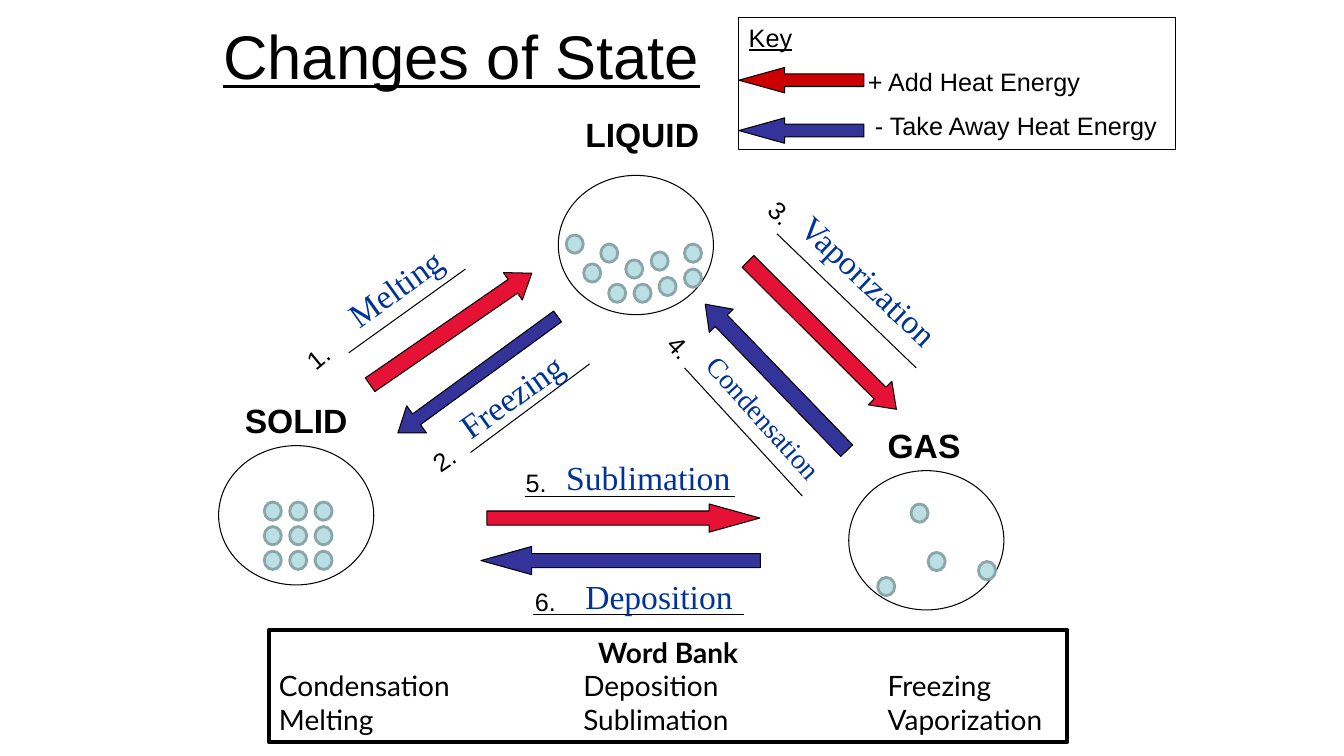
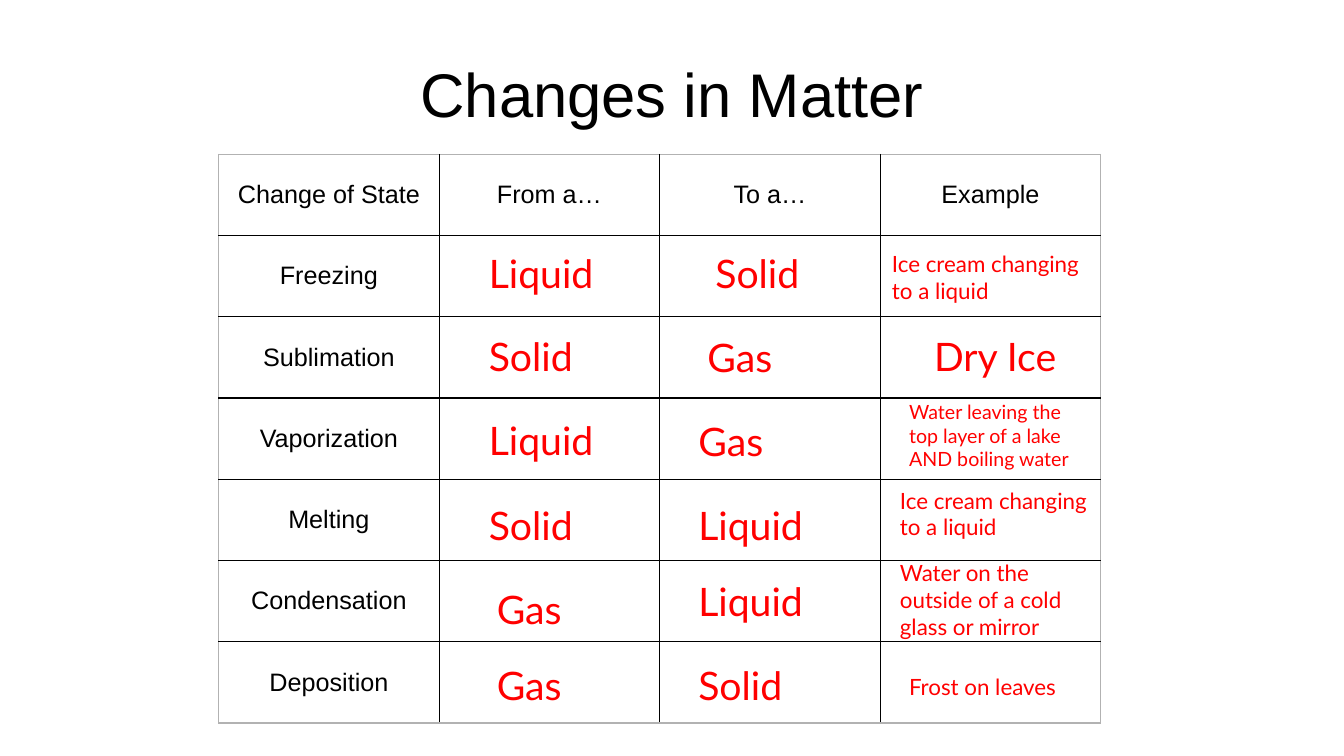
from lxml import etree
from pptx import Presentation
from pptx.dml.color import RGBColor
from pptx.enum.shapes import MSO_CONNECTOR, MSO_SHAPE
from pptx.enum.text import MSO_ANCHOR, PP_ALIGN
from pptx.oxml.ns import qn
from pptx.util import Cm, Pt

LEFT, CENTER = PP_ALIGN.LEFT, PP_ALIGN.CENTER
TOP, MIDDLE = MSO_ANCHOR.TOP, MSO_ANCHOR.MIDDLE
ELLIPSE, RECT, ARROW = MSO_SHAPE.OVAL, MSO_SHAPE.RECTANGLE, MSO_SHAPE.RIGHT_ARROW
STRAIGHT = MSO_CONNECTOR.STRAIGHT

BLACK = RGBColor(0x00, 0x00, 0x00)
GRAY = RGBColor(0xB2, 0xB2, 0xB2)
ADD_RED = RGBColor(0xE6, 0x12, 0x35)
KEY_RED = RGBColor(0xCC, 0x00, 0x00)
REMOVE_BLUE = RGBColor(0x33, 0x33, 0x99)
WORD_BLUE = RGBColor(0x00, 0x33, 0x99)
ANSWER_RED = RGBColor(0xFF, 0x00, 0x00)
DOT_FILL = RGBColor(0xBB, 0xE0, 0xE3)
DOT_LINE = RGBColor(0x8A, 0xA6, 0xA8)

SANS, SERIF, LATO = "Arial", "Times New Roman", "Lato"

# State name: label position, circle position, particle positions (cm)
STATES = {
    "SOLID": ((5.92, 9.96), (5.51, 11.23),
              [(6.66 + 0.64 * col, 12.65 + 0.62 * row)
               for row in range(3) for col in range(3)]),
    "LIQUID": ((14.5, 2.74), (14.07, 4.42),
               [(15.34, 7.16), (15.98, 7.16), (17.25, 6.78), (14.71, 6.65),
                (16.61, 6.99), (15.77, 6.55), (15.14, 6.15), (16.41, 6.35),
                (17.25, 6.15), (14.27, 5.92)]),
    "GAS": ((22.12, 10.59), (21.39, 11.86),
            [(22.96, 12.7), (23.39, 13.92), (24.66, 14.15), (22.12, 14.55)]),
}

# Left, top, width, height, rotation, colour, shaft and head proportions
ARROWS = [
    (8.89, 7.87, 4.95, 0.84, 325.4, ADD_RED, 0.5, 0.69),
    (18.08, 8.03, 5.28, 0.84, 44.9, ADD_RED, 0.5, 0.69),
    (12.27, 12.7, 6.88, 0.71, 0, ADD_RED, 0.5, 1.8),
    (9.55, 9.02, 4.98, 0.84, 143.9, REMOVE_BLUE, 0.4, 0.69),
    (16.99, 9.09, 5.13, 0.84, 226, REMOVE_BLUE, 0.5, 0.69),
    (12.12, 13.77, 7.04, 0.71, 180, REMOVE_BLUE, 0.5, 1.8),
    (18.62, 1.7, 3.15, 0.64, 180, KEY_RED, 0.5, 1.8),
    (18.62, 2.97, 3.15, 0.64, 180, REMOVE_BLUE, 0.5, 1.8),
]

# Answer line ends; number left, top, rotation; word, its box, rotation, size
CHANGES = [
    ((8.79, 8.89, 11.73, 6.78), (7.49, 8.48, 320.6),
     "Melting", (8.33, 6.48, 3.61, 1.3), 324.4, 24),
    ((11.86, 11.4, 14.86, 9.17), (10.67, 11.05, 326),
     "Freezing", (11.02, 8.92, 4.9, 1.3), 324.5, 24),
    ((19.58, 5.89, 23.09, 9.27), (19.15, 4.88, 45.1),
     "Vaporization", (19.48, 6.45, 4.9, 1.3), 43.4, 24),
    ((17.25, 9.27, 20.22, 12.5), (16.61, 8.26, 46.8),
     "Condensation", (16.97, 10.16, 4.9, 1.12), 48.1, 20),
    ((13.23, 12.52, 18.52, 12.52), (13, 11.66, 0),
     "Sublimation", (14.02, 11.4, 4.9, 1.3), 0, 24),
    ((13.44, 15.49, 18.75, 15.49), (13.23, 14.66, 0),
     "Deposition", (14.5, 14.4, 4.9, 1.3), 0, 24),
]

HEADERS = ["Change of State", "From a…", "To a…", "Example"]
ROW_NAMES = ["Freezing", "Sublimation", "Vaporization", "Melting",
             "Condensation", "Deposition"]

# Text, left, top
STATE_ANSWERS = [
    ("Liquid", 12.07, 6.15), ("Solid", 17.78, 6.17),
    ("Solid", 12.07, 8.26), ("Gas", 17.58, 8.28), ("Dry Ice", 23.29, 8.26),
    ("Liquid", 12.07, 10.36), ("Gas", 17.35, 10.39),
    ("Solid", 12.07, 12.52), ("Liquid", 17.35, 12.52),
    ("Gas", 12.27, 14.63), ("Liquid", 17.35, 14.43),
    ("Gas", 12.27, 16.54), ("Solid", 17.35, 16.54),
]

# Text, box, size
EXAMPLES = [
    ("Ice cream changing to a liquid", (22.23, 6.17, 5.72, 1.63), 16),
    ("Water leaving the top layer of a lake AND boiling water",
     (22.66, 9.96, 4.88, 2.06), 14),
    ("Ice cream changing to a liquid", (22.43, 12.14, 5.72, 1.63), 16),
    ("Water on the outside of a cold glass or mirror",
     (22.43, 13.97, 5.08, 2.31), 16),
    ("Frost on leaves", (22.66, 16.84, 4.88, 0.94), 16),
]


def cm(*lengths):
    return [Cm(length) for length in lengths]


def write(tf, text, size=18, font=SANS, color=BLACK, bold=False,
          underline=False, align=LEFT, before=0, indent=0, tabs=(), new=False):
    """Write one paragraph: the first of the frame, or a new one after it."""
    p = tf.add_paragraph() if new else tf.paragraphs[0]
    p.alignment = align
    p.space_before = Pt(before)
    pPr = p._p.get_or_add_pPr()
    if indent:
        pPr.set("marL", str(Cm(indent)))
        pPr.set("indent", "0")
    if tabs:
        tab_list = etree.SubElement(pPr, qn("a:tabLst"))
        for pos in tabs:
            etree.SubElement(tab_list, qn("a:tab"), pos=str(Cm(pos)), algn="l")
    r = p.add_run()
    r.text = text
    r.font.size, r.font.name = Pt(size), font
    r.font.bold, r.font.underline = bold, underline
    r.font.color.rgb = color


def add_title(prs, text, box, **style):
    """Add a slide that has only a title, and return the slide."""
    slide = prs.slides.add_slide(prs.slide_layouts[5])
    title = slide.shapes.title
    title.left, title.top, title.width, title.height = cm(*box)
    title.text_frame.vertical_anchor = MIDDLE
    write(title.text_frame, text, size=44, align=CENTER, **style)
    return slide


def add_text(slide, text, box, rotation=0, **style):
    sp = slide.shapes.add_textbox(*cm(*box))
    sp.rotation = rotation
    sp.text_frame.word_wrap = True
    write(sp.text_frame, text, **style)


def add_shape(slide, kind, box, fill=None, line=BLACK, width=0.75):
    sp = slide.shapes.add_shape(kind, *cm(*box))
    sp.shadow.inherit = False
    if fill is None:
        sp.fill.background()
    else:
        sp.fill.solid()
        sp.fill.fore_color.rgb = fill
    sp.line.color.rgb = line
    sp.line.width = Pt(width)
    return sp


def add_panel(slide, box, width):
    """Add an outlined rectangle and return its text frame."""
    tf = add_shape(slide, RECT, box, width=width).text_frame
    tf.word_wrap = True
    tf.vertical_anchor = TOP
    return tf


def add_arrow(slide, left, top, width, height, rotation, color, shaft, head):
    sp = add_shape(slide, ARROW, (left, top, width, height), color)
    sp.rotation = rotation
    sp.adjustments[0], sp.adjustments[1] = shaft, head


def add_line(slide, ends):
    line = slide.shapes.add_connector(STRAIGHT, *cm(*ends))
    line.line.color.rgb = BLACK
    line.line.width = Pt(0.75)
    etree.SubElement(line._element.spPr, qn("a:effectLst"))


def add_state(slide, name, label_at, circle_at, dots):
    add_shape(slide, ELLIPSE, (*circle_at, 3.91, 3.51))
    add_text(slide, name, (*label_at, 3.38, 1.27), size=24, bold=True)
    for dot in dots:
        add_shape(slide, ELLIPSE, (*dot, 0.43, 0.46), DOT_FILL, DOT_LINE, 2)


def add_key(slide):
    tf = add_panel(slide, (18.62, 0.43, 11, 3.33), 0.75)
    write(tf, "Key", underline=True)
    write(tf, "+ Add Heat Energy", before=10, indent=3, new=True)
    write(tf, "- Take Away Heat Energy", before=10, indent=3.18, new=True)


def add_word_bank(slide):
    tf = add_panel(slide, (6.78, 15.88, 20.12, 2.82), 3)
    write(tf, "Word Bank", size=20, font=LATO, bold=True, align=CENTER)
    for words in (("Condensation", "Deposition", "Freezing"),
                  ("Melting", "Sublimation", "Vaporization")):
        write(tf, "\t".join(words), size=20, font=LATO,
              tabs=(7.67, 15.34), new=True)


def set_borders(cell, colors):
    """Draw the left, right, top and bottom borders in the given colours."""
    tcPr = cell._tc.get_or_add_tcPr()
    for side, color in zip("LRTB", colors):
        ln = etree.SubElement(tcPr, qn(f"a:ln{side}"), w=str(Pt(1)))
        fill = etree.SubElement(ln, qn("a:solidFill"))
        etree.SubElement(fill, qn("a:srgbClr"), val=str(color))


def add_matter_table(slide):
    rows, cols = len(ROW_NAMES) + 1, len(HEADERS)
    table = slide.shapes.add_table(rows, cols, *cm(5.51, 3.89, 22.23, 14.33)).table
    table.first_row = table.horz_banding = False
    for r in range(rows):
        for c in range(cols):
            cell = table.cell(r, c)
            outer = (c == 0, c == cols - 1, r == 0, r == rows - 1)
            set_borders(cell, [GRAY if edge else BLACK for edge in outer])
            cell.fill.background()
            cell.vertical_anchor = MIDDLE
    for c, text in enumerate(HEADERS):
        write(table.cell(0, c).text_frame, text, align=CENTER)
    for r, text in enumerate(ROW_NAMES, 1):
        write(table.cell(r, 0).text_frame, text, align=CENTER)


def build_state_slide(prs):
    slide = add_title(prs, "Changes of State", (0.2, -0.2, 22.86, 3.18),
                      underline=True)
    add_key(slide)
    for name, parts in STATES.items():
        add_state(slide, name, *parts)
    for arrow in ARROWS:
        add_arrow(slide, *arrow)
    for number, change in enumerate(CHANGES, 1):
        ends, (left, top, turn), word, box, rotation, size = change
        add_line(slide, ends)
        add_text(slide, f"{number}.", (left, top, 1.07, 1.02), turn)
        add_text(slide, word, box, rotation, size=size, font=SERIF,
                 color=WORD_BLUE)
    add_word_bank(slide)


def build_matter_slide(prs):
    slide = add_title(prs, "Changes in Matter", (1.7, 0.76, 30.48, 3.18))
    add_matter_table(slide)
    states = [(text, (left, top, 4.24, 1.45), 28)
              for text, left, top in STATE_ANSWERS]
    for text, box, size in states + EXAMPLES:
        add_text(slide, text, box, size=size, font=LATO, color=ANSWER_RED)


def main():
    prs = Presentation()
    prs.slide_width, prs.slide_height = cm(33.87, 19.05)
    build_state_slide(prs)
    build_matter_slide(prs)
    prs.save("out.pptx")


if __name__ == "__main__":
    main()
